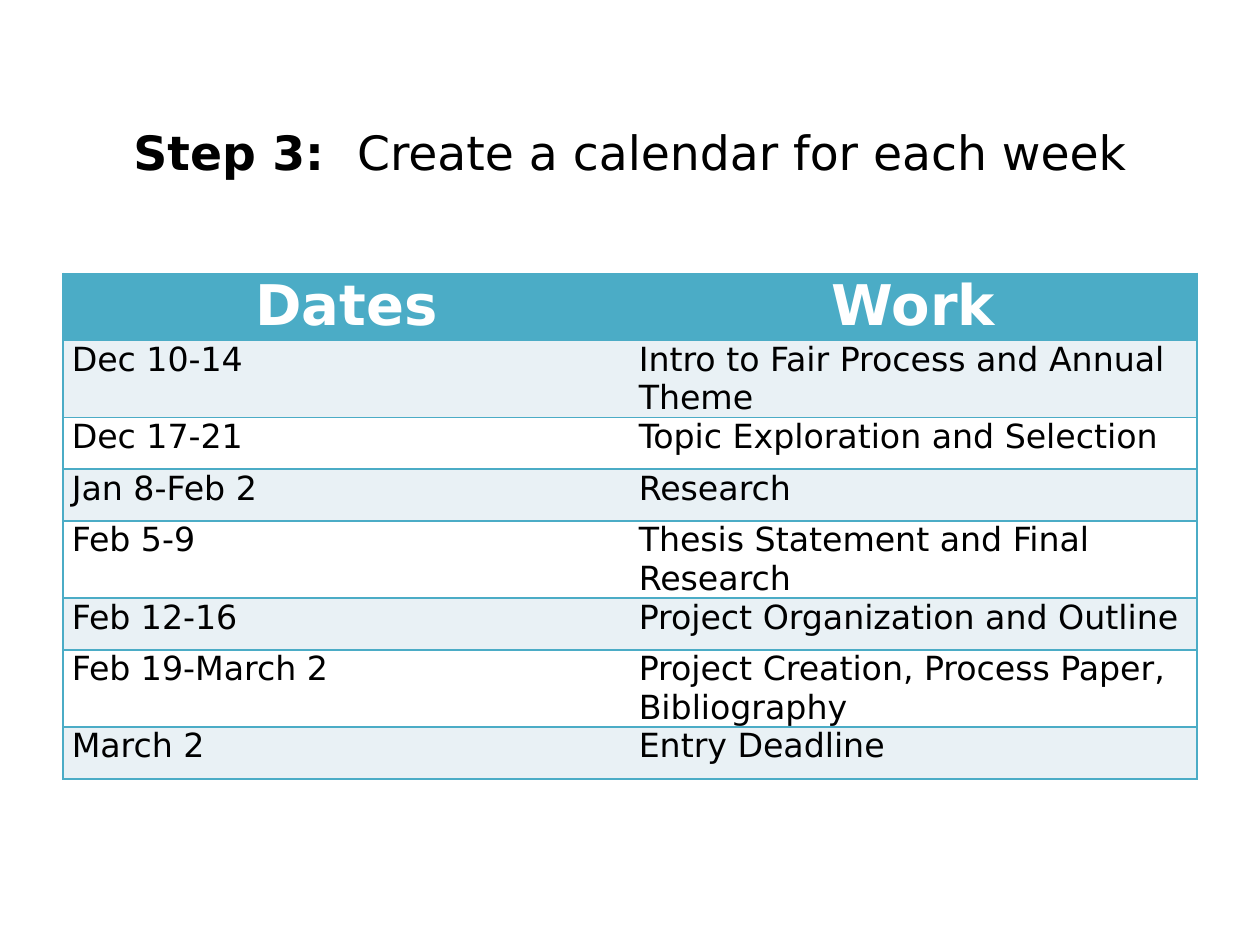
from lxml import etree
from pptx import Presentation
from pptx import util as u
from pptx.dml.color import RGBColor
from pptx.enum import text
from pptx.oxml import ns

COLORS = {"ink": "000000", "paper": "FFFFFF", "accent": "4BACC6", "band": "E9F1F5"}

HEADINGS = ("Dates", "Work")
CALENDAR = [
    ("Dec 10-14", "Intro to Fair Process and Annual Theme"),
    ("Dec 17-21", "Topic Exploration and Selection"),
    ("Jan 8-Feb 2", "Research"),
    ("Feb 5-9", "Thesis Statement and Final Research"),
    ("Feb 12-16", "Project Organization and Outline"),
    ("Feb 19-March 2", "Project Creation, Process Paper, Bibliography"),
    ("March 2", "Entry Deadline"),
]


class SlideBuilder:
    font_name = "DejaVu Sans"

    def __init__(self, slide):
        self.slide = slide

    def color(self, name):
        return RGBColor.from_string(COLORS[name])

    def style(self, font, size, color, bold=None):
        font.name = self.font_name
        font.size = u.Pt(size)
        font.color.rgb = self.color(color)
        font.bold = bold

    def title(self, lead, rest, left, top, width, height):
        shape = self.slide.shapes.title
        shape.left, shape.top = u.Inches(left), u.Inches(top)
        shape.width, shape.height = u.Inches(width), u.Inches(height)
        shape.text_frame.vertical_anchor = text.MSO_ANCHOR.MIDDLE
        paragraph = shape.text_frame.paragraphs[0]
        paragraph.alignment = text.PP_ALIGN.CENTER
        self.style(paragraph.font, 27, "ink")
        for words, bold in ((lead, True), (rest, False)):
            run = paragraph.add_run()
            run.text = words
            self.style(run.font, 27, "ink", bold)

    def borders(self, cell, visible_sides):
        properties = cell._tc.get_or_add_tcPr()
        for side in "LRTB":
            line = etree.SubElement(properties, ns.qn(f"a:ln{side}"), w=str(u.Pt(1)))
            if side in visible_sides:
                fill = etree.SubElement(line, ns.qn("a:solidFill"))
                etree.SubElement(fill, ns.qn("a:srgbClr"), val=COLORS["accent"])
            else:
                etree.SubElement(line, ns.qn("a:noFill"))

    def cell(self, cell, words, is_header, fill, sides):
        cell.margin_left = cell.margin_right = u.Inches(0.07)
        cell.margin_top = cell.margin_bottom = 0
        self.borders(cell, sides)
        cell.fill.solid()
        cell.fill.fore_color.rgb = self.color(fill)
        cell.text = words
        paragraph = cell.text_frame.paragraphs[0]
        if is_header:
            paragraph.alignment = text.PP_ALIGN.CENTER
            self.style(paragraph.font, 32, "paper", True)
        else:
            self.style(paragraph.font, 19, "ink", False)

    def table(self, rows, left, top, width, header_height, row_height):
        height = header_height + row_height * (len(rows) - 1)
        table = self.slide.shapes.add_table(
            len(rows), len(rows[0]), u.Inches(left), u.Inches(top),
            u.Inches(width), u.Inches(height)).table
        for index, row in enumerate(rows):
            is_header = index == 0
            table.rows[index].height = u.Inches(header_height if is_header else row_height)
            fill = "accent" if is_header else ("band" if index % 2 else "paper")
            for column, (words, sides) in enumerate(zip(row, ("LTB", "RTB"))):
                self.cell(table.cell(index, column), words, is_header, fill, sides)


def main():
    presentation = Presentation()
    presentation.slide_width = u.Inches(10)
    presentation.slide_height = u.Inches(7.5)
    slide = presentation.slides.add_slide(presentation.slide_layouts[5])
    builder = SlideBuilder(slide)
    builder.title("Step 3:  ", "Create a calendar for each week", 0.5, 0.58, 9, 1.25)
    builder.table([HEADINGS, *CALENDAR], 0.5, 2.17, 9, 0.53, 0.41)
    presentation.save("out.pptx")


if __name__ == "__main__":
    main()
